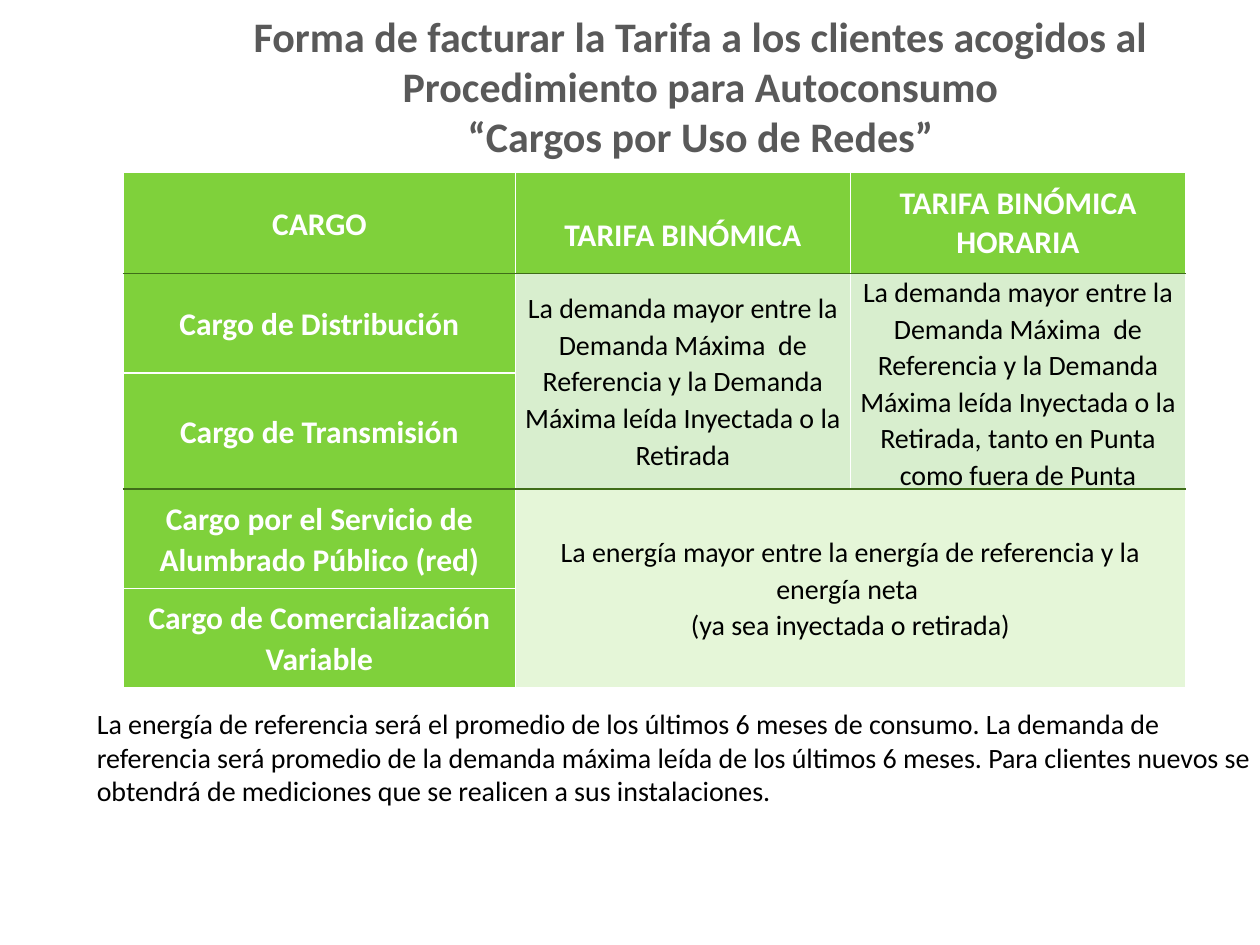
"""Build a slide on how grid-use charges are billed to self-consumption customers."""
from dataclasses import dataclass

from pptx import Presentation
from pptx import util as u
from pptx.dml.color import RGBColor
from pptx.enum import shapes, text
from pptx.oxml import parse_xml
from pptx.oxml.ns import nsdecls


@dataclass(frozen=True)
class Theme:
    font: str = "Calibri"
    title: str = "595959"
    ink: str = "000000"
    paper: str = "FFFFFF"
    green: str = "7FD13B"
    rule: str = "3F6D19"
    demand: str = "D8EECE"
    energy: str = "E5F6D8"
    title_size: int = 24
    label_size: int = 18
    body_size: int = 16
    spacing: float = 1.07


THEME = Theme()
SLIDE = (10, 7.5)

TITLE = [
    "Forma de facturar la Tarifa a los clientes acogidos al Procedimiento para Autoconsumo",
    "“Cargos por Uso de Redes”",
]
HEADERS = ["CARGO", "TARIFA BINÓMICA", "TARIFA BINÓMICA HORARIA"]
CHARGES = [
    "Cargo de Distribución",
    "Cargo de Transmisión",
    "Cargo por el Servicio de Alumbrado Público (red)",
    "Cargo de Comercialización Variable",
]
DEMAND = ("La demanda mayor entre la Demanda Máxima  de Referencia y la Demanda "
          "Máxima leída Inyectada o la Retirada")
RULES = [
    ((1, 1), (2, 1), [DEMAND], THEME.demand),
    ((1, 2), (2, 2), [DEMAND + ", tanto en Punta como fuera de Punta"], THEME.demand),
    ((3, 1), (4, 2), ["La energía mayor entre la energía de referencia y la energía neta ",
                      "(ya sea inyectada o retirada)"], THEME.energy),
]
NOTE = ("La energía de referencia será el promedio de los últimos 6 meses de consumo. "
        "La demanda de referencia será promedio de la demanda máxima leída de los últimos "
        "6 meses. Para clientes nuevos se obtendrá de mediciones que se realicen a sus "
        "instalaciones.")

TITLE_AREA = (1.61, 0.13, 7.9, 1.1)
TABLE_ORIGIN = (0.98, 1.37)
COLUMNS = [3.11, 2.66, 2.66]
ROWS = [0.8] + [0.79] * len(CHARGES)
NOTE_AREA = (0.67, 5.56, 9.45, 0.91)
GROUP_ENDS = (0, 2)


def inches(lengths):
    return [u.Inches(length) for length in lengths]


def add_span(para, words, size, color, bold=False):
    span = para.add_run()
    span.text = words
    span.font.name = THEME.font
    span.font.size = u.Pt(size)
    span.font.bold = bold
    span.font.color.rgb = RGBColor.from_string(color)


def add_borders(cell, row):
    top = THEME.rule if row - 1 in GROUP_ENDS else THEME.paper
    bottom = THEME.rule if row in GROUP_ENDS else THEME.paper
    sides = {"L": THEME.paper, "R": THEME.paper, "T": top, "B": bottom}
    properties = cell._tc.get_or_add_tcPr()
    for side, color in sides.items():
        properties.append(parse_xml(
            f'<a:ln{side} {nsdecls("a")} w="{u.Pt(1)}"><a:solidFill>'
            f'<a:srgbClr val="{color}"/></a:solidFill></a:ln{side}>'))


def fill_cell(cell, lines, size, color, bold, spacing=THEME.spacing):
    cell.vertical_anchor = text.MSO_ANCHOR.MIDDLE
    for index, words in enumerate(lines):
        frame = cell.text_frame
        para = frame.add_paragraph() if index else frame.paragraphs[0]
        para.alignment = text.PP_ALIGN.CENTER
        para.line_spacing = spacing
        add_span(para, words, size, color, bold)


def add_title(page):
    box = page.shapes.add_textbox(*inches(TITLE_AREA))
    frame = box.text_frame
    frame.word_wrap = True
    frame.vertical_anchor = text.MSO_ANCHOR.MIDDLE
    para = frame.paragraphs[0]
    para.alignment = text.PP_ALIGN.CENTER
    for index, line in enumerate(TITLE):
        if index:
            para.add_line_break()
        add_span(para, line, THEME.title_size, THEME.title, True)


def add_charges(page):
    area = inches((*TABLE_ORIGIN, sum(COLUMNS), sum(ROWS)))
    table = page.shapes.add_table(len(ROWS), len(COLUMNS), *area).table
    table.first_row = table.horz_banding = False
    for column, width in zip(table.columns, inches(COLUMNS)):
        column.width = width
    for row, height in zip(table.rows, inches(ROWS)):
        row.height = height

    fills = {(row, col): color for (top, left), (bottom, right), _, color in RULES
             for row in range(top, bottom + 1) for col in range(left, right + 1)}
    for row in range(len(ROWS)):
        for col in range(len(COLUMNS)):
            cell = table.cell(row, col)
            cell.margin_left = cell.margin_right = u.Inches(0.07)
            cell.margin_top = cell.margin_bottom = 0
            add_borders(cell, row)
            cell.fill.solid()
            cell.fill.fore_color.rgb = RGBColor.from_string(
                fills.get((row, col), THEME.green))

    for col, words in enumerate(HEADERS):
        spacing = 1.0 if col == 2 else THEME.spacing
        fill_cell(table.cell(0, col), [words], THEME.label_size, THEME.paper, True, spacing)
    table.cell(0, 1).vertical_anchor = text.MSO_ANCHOR.TOP
    table.cell(0, 1).margin_top = u.Inches(0.33)

    for row, words in enumerate(CHARGES, start=1):
        fill_cell(table.cell(row, 0), [words], THEME.label_size, THEME.paper, True)
    for start, end, lines, _ in RULES:
        table.cell(*start).merge(table.cell(*end))
        fill_cell(table.cell(*start), lines, THEME.body_size, THEME.ink, False)


def add_note(page):
    box = page.shapes.add_shape(shapes.MSO_SHAPE.RECTANGLE, *inches(NOTE_AREA))
    box.shadow.inherit = False
    box.fill.solid()
    box.fill.fore_color.rgb = RGBColor.from_string(THEME.paper)
    box.line.fill.background()
    frame = box.text_frame
    frame.word_wrap = True
    frame.auto_size = text.MSO_AUTO_SIZE.SHAPE_TO_FIT_TEXT
    frame.vertical_anchor = text.MSO_ANCHOR.TOP
    para = frame.paragraphs[0]
    para.alignment = text.PP_ALIGN.LEFT
    add_span(para, NOTE, THEME.body_size, THEME.ink)


def main():
    deck = Presentation()
    deck.slide_width, deck.slide_height = inches(SLIDE)
    page = deck.slides.add_slide(deck.slide_layouts[6])
    add_title(page)
    add_charges(page)
    add_note(page)
    deck.save("out.pptx")


if __name__ == "__main__":
    main()
